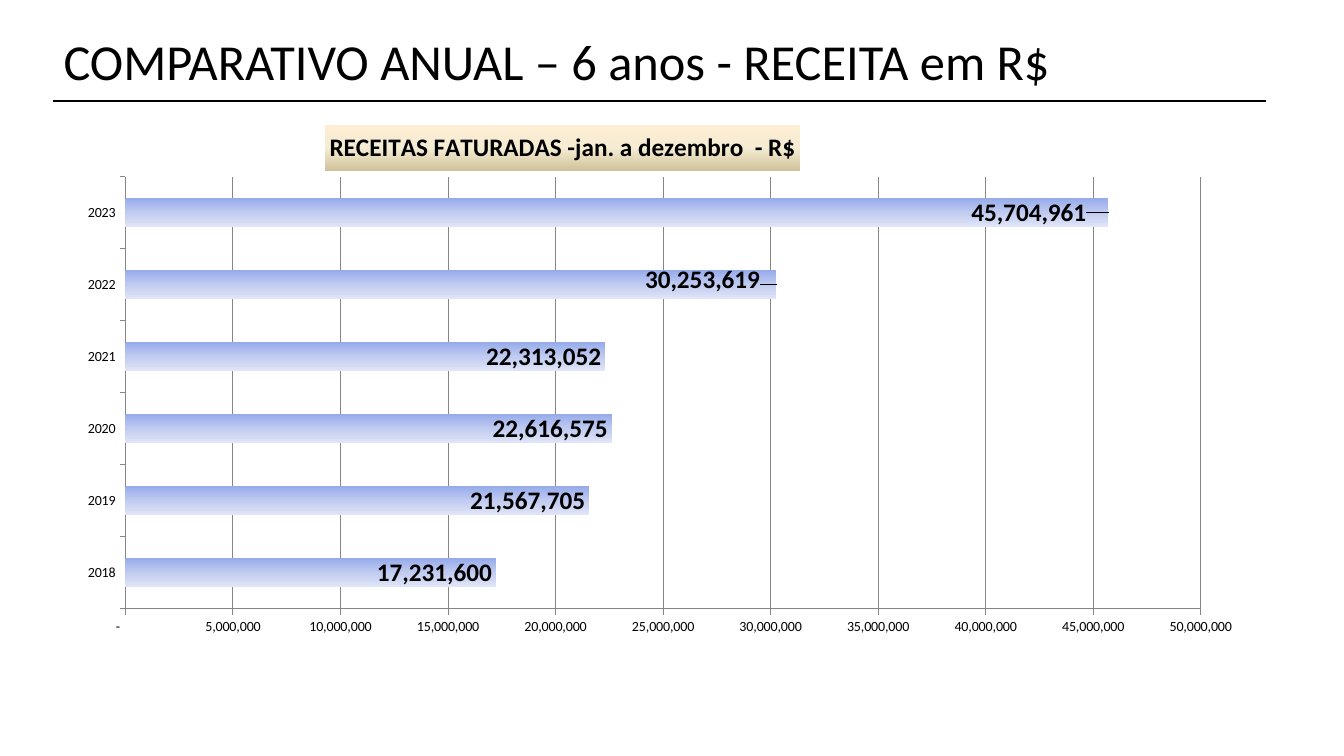
from lxml.etree import SubElement
from pptx import Presentation
from pptx.chart.data import CategoryChartData
from pptx.dml.color import RGBColor
from pptx.enum.chart import XL_CHART_TYPE, XL_LABEL_POSITION, XL_TICK_MARK
from pptx.enum.text import MSO_ANCHOR, MSO_AUTO_SIZE, PP_ALIGN
from pptx.oxml import parse_xml
from pptx.oxml.ns import nsdecls, qn
from pptx.util import Inches, Pt

FONT = "Calibri"
COLORS = {"text": "000000", "grid": "868686"}
BAR_STOPS = {0: "96ABEA", 50: "C0CBF0", 100: "E0E5F7"}
TITLE_STOPS = {0: "FDEED3", 50: "F5ECD3", 100: "D0C29B"}
REVENUE = {"2018": 17231600, "2019": 21567705, "2020": 22616575,
           "2021": 22313052, "2022": 30253619, "2023": 45704961}


def set_gradient(fmt, element, stops):
    """Fill from top to bottom with the given percent: colour stops."""
    fmt.fill.gradient()
    fmt.fill.gradient_angle = 270
    gs_lst = next(element.iter(qn("a:gsLst")))
    for gs in list(gs_lst):
        gs_lst.remove(gs)
    for pos, color in stops.items():
        gs = SubElement(gs_lst, qn("a:gs"), pos=str(pos * 1000))
        SubElement(gs, qn("a:srgbClr"), val=color)


def set_layout(parent, index, **values):
    """Place a chart part by shares of the chart's size."""
    for old in parent.findall(qn("c:layout")):
        parent.remove(old)
    items = "".join(f'<c:{k} val="{v}"/>' for k, v in values.items())
    parent.insert(index, parse_xml(
        f'<c:layout {nsdecls("c")}><c:manualLayout>{items}</c:manualLayout></c:layout>'))


prs = Presentation()
prs.slide_width, prs.slide_height = Inches(13.33), Inches(7.5)
s = prs.slides.add_slide(prs.slide_layouts[5])
black = RGBColor.from_string(COLORS["text"])

# Title and rule
title = s.shapes.title
title.left, title.top, title.width, title.height = map(Inches, (0.53, 0.29, 10.21, 0.7))
tf = title.text_frame
tf.text = "COMPARATIVO ANUAL – 6 anos - RECEITA em R$"
tf.auto_size = MSO_AUTO_SIZE.NONE
tf.vertical_anchor = MSO_ANCHOR.MIDDLE
p = tf.paragraphs[0]
p.alignment, p.line_spacing = PP_ALIGN.LEFT, 0.9
p.font.name, p.font.size, p.font.color.rgb = FONT, Pt(36), black

rule = s.shapes.add_connector(1, Inches(0.53), Inches(1), Inches(12.56), Inches(1))
rule.line.color.rgb, rule.line.width = black, Pt(1.5)
SubElement(rule._element.spPr, qn("a:effectLst"))

# Bar chart
data = CategoryChartData(number_format="#,##0")
data.categories = list(REVENUE)
data.add_series("Series 1", list(REVENUE.values()))
chart = s.shapes.add_chart(XL_CHART_TYPE.BAR_CLUSTERED, Inches(0.64), Inches(1.09),
                           Inches(11.85), Inches(5.31), data).chart
chart.has_legend = False
chart.font.name, chart.font.size, chart.font.color.rgb = FONT, Pt(10), black
set_layout(chart._chartSpace.chart.plotArea, 0, layoutTarget="inner", xMode="edge",
           yMode="edge", x=0.051, y=0.125, w=0.9, h=0.807)

# Chart title
chart.has_title = True
ct = chart.chart_title
ct.text_frame.text = "RECEITAS FATURADAS -jan. a dezembro  - R$"
font = ct.text_frame.paragraphs[0].font
font.name, font.size, font.bold, font.color.rgb = FONT, Pt(18), True, black
ct.include_in_layout = False
set_gradient(ct.format, ct._element, TITLE_STOPS)
set_layout(ct._element, 1, xMode="edge", yMode="edge", x=0.218, y=0.028)

# Axes
value_axis = chart.value_axis
value_axis.minimum_scale, value_axis.maximum_scale = 0, 50_000_000
value_axis.major_unit = 5_000_000
value_axis.has_major_gridlines = True
value_axis.tick_labels.number_format = r'_-* #,##0_-;\-* #,##0_-;_-* "-"??_-;_-@_'
value_axis.tick_labels.number_format_is_linked = False
for axis in (value_axis, chart.category_axis):
    axis.major_tick_mark = XL_TICK_MARK.OUTSIDE
for part in (value_axis, chart.category_axis, value_axis.major_gridlines):
    part.format.line.color.rgb = RGBColor.from_string(COLORS["grid"])
    part.format.line.width = Pt(0.75)

# Bars and labels
plot = chart.plots[0]
plot.gap_width, plot.vary_by_categories = 150, False
series = plot.series[0]
set_gradient(series.format, series._element, BAR_STOPS)
labels = series.data_labels
labels.show_value = True
labels.number_format, labels.number_format_is_linked = "#,##0", False
shifted = {4: (-0.01, -0.01), 5: (-0.015, 0)}
points = {i: series.points[i].data_label for i in shifted}
for label in (labels, *points.values()):
    label.position = XL_LABEL_POSITION.INSIDE_END
    font = label.font
    font.name, font.size, font.bold, font.color.rgb = FONT, Pt(18), True, black
for i, (dx, dy) in shifted.items():
    d_lbl = next(e for e in series._element.iter(qn("c:dLbl"))
                 if e.find(qn("c:idx")).get("val") == str(i))
    set_layout(d_lbl, 1, x=dx, y=dy)

prs.save("out.pptx")
